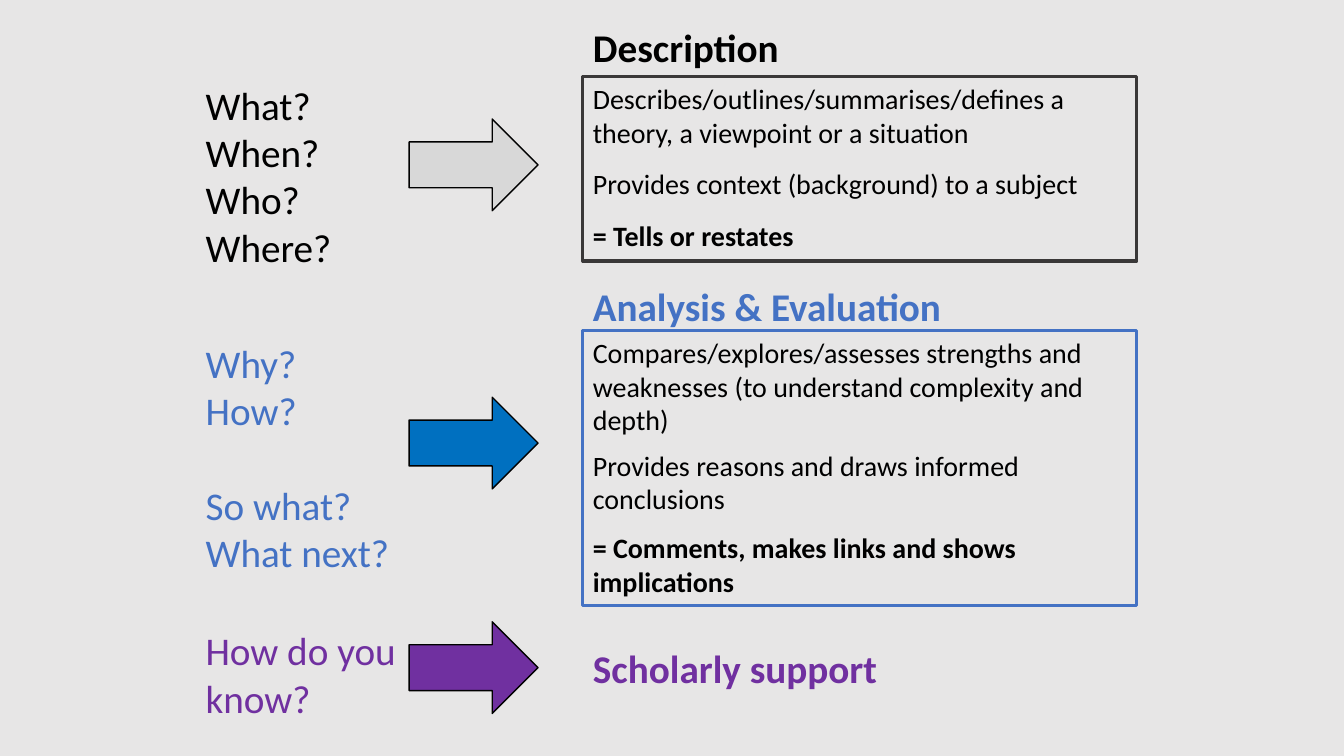
from dataclasses import dataclass

from lxml.etree import SubElement
from pptx import Presentation
from pptx.dml.color import RGBColor
from pptx.enum.shapes import MSO_SHAPE
from pptx.enum.text import MSO_ANCHOR, MSO_AUTO_SIZE, PP_ALIGN
from pptx.oxml.ns import qn
from pptx.util import Cm, Pt


@dataclass(frozen=True)
class Theme:
    font: str = "Calibri"
    heading_size: int = 28
    body_size: int = 20
    background: str = "E7E6E6"
    ink: str = "000000"
    frame: str = "3A3838"
    blue: str = "4472C4"
    purple: str = "7030A0"
    arrow_grey: str = "D8D8D8"
    arrow_blue: str = "0070C0"


THEME = Theme()


def write_text(shape, paragraphs, size=THEME.heading_size, color=THEME.ink,
               bold=False, bold_last=False, gaps=(), anchor=MSO_ANCHOR.TOP):
    """Fill a shape with left-aligned paragraphs; gaps are points before each one."""
    frame = shape.text_frame
    frame.word_wrap = True
    frame.auto_size = MSO_AUTO_SIZE.NONE
    frame.vertical_anchor = anchor
    frame.text = "\n".join(paragraphs)
    for index, para in enumerate(frame.paragraphs):
        properties = para._p.get_or_add_pPr()
        properties.set("marL", "0")
        properties.set("indent", "0")
        SubElement(properties, qn("a:buNone"))
        para.alignment = PP_ALIGN.LEFT
        para.space_before = Pt(gaps[index] if gaps else 0)
        for span in para.runs:
            span.font.name = THEME.font
            span.font.size = Pt(size)
            span.font.bold = bold or (bold_last and index == len(paragraphs) - 1)
            span.font.color.rgb = RGBColor.from_string(color)


def add_filled_shape(kind, left, top, width, height, fill, line, line_width):
    shape = slide.shapes.add_shape(kind, Cm(left), Cm(top), Cm(width), Cm(height))
    shape.shadow.inherit = False
    shape.fill.solid()
    shape.fill.fore_color.rgb = RGBColor.from_string(fill)
    shape.line.color.rgb = RGBColor.from_string(line)
    shape.line.width = Pt(line_width)
    return shape


deck = Presentation()
deck.slide_width, deck.slide_height = Cm(33.87), Cm(19.05)
slide = deck.slides.add_slide(deck.slide_layouts.get_by_name("Comparison"))
slide.background.fill.solid()
slide.background.fill.fore_color.rgb = RGBColor.from_string(THEME.background)
title, analysis_heading, first_list, support_heading, second_list = slide.placeholders
third_list = slide.shapes.add_textbox(0, 0, 0, 0)

QUESTIONS_LEFT, ARROW_LEFT, ANSWER_LEFT = 4.93, 10.31, 14.69

# Headings: shape, text, top, width, height, colour
headings = [
    (title, "Description", 0.2, 10.24, 1.98, THEME.ink),
    (analysis_heading, "Analysis & Evaluation", 6.91, 10.24, 1.57, THEME.blue),
    (support_heading, "Scholarly support", 16.05, 15.93, 1.57, THEME.purple),
]
for shape, text, top, width, height, color in headings:
    shape.left, shape.top = Cm(ANSWER_LEFT), Cm(top)
    shape.width, shape.height = Cm(width), Cm(height)
    write_text(shape, [text], color=color, bold=True, anchor=MSO_ANCHOR.MIDDLE)

# Questions: shape, lines, top, width, height, colour, gaps
questions = [
    (first_list, ["What?", "When?", "Who?", "Where?"],
     1.93, 5.41, 5.05, THEME.ink, ()),
    (second_list, ["Why?", "How?", "So what?", "What next?"],
     8.43, 6.45, 6.25, THEME.blue, (0, 0, 34, 0)),
    (third_list, ["How do you know?"],
     15.67, 5.41, 2.64, THEME.purple, ()),
]
for shape, lines, top, width, height, color, gaps in questions:
    shape.left, shape.top = Cm(QUESTIONS_LEFT), Cm(top)
    shape.width, shape.height = Cm(width), Cm(height)
    write_text(shape, lines, color=color, gaps=gaps)

# Answer boxes: top, height, outline, gaps, paragraphs
answers = [
    (1.93, 4.65, THEME.frame, (0, 13, 13), [
        "Describes/outlines/summarises/defines a theory, a viewpoint or a situation",
        "Provides context (background) to a subject",
        "= Tells or restates",
    ]),
    (8.33, 6.93, THEME.blue, (0, 8.5, 11), [
        "Compares/explores/assesses strengths and weaknesses "
        "(to understand complexity and depth)",
        "Provides reasons and draws informed conclusions",
        "= Comments, makes links and shows implications",
    ]),
]
for top, height, outline, gaps, paragraphs in answers:
    box = add_filled_shape(MSO_SHAPE.RECTANGLE, ANSWER_LEFT, top, 13.96, height,
                           THEME.background, outline, 2.25)
    write_text(box, paragraphs, size=THEME.body_size, bold_last=True, gaps=gaps)

arrows = [(3, THEME.arrow_grey), (10.01, THEME.arrow_blue), (15.67, THEME.purple)]
for top, fill in arrows:
    add_filled_shape(MSO_SHAPE.RIGHT_ARROW, ARROW_LEFT, top, 3.25, 2.31,
                     fill, THEME.ink, 1)

deck.save("out.pptx")
